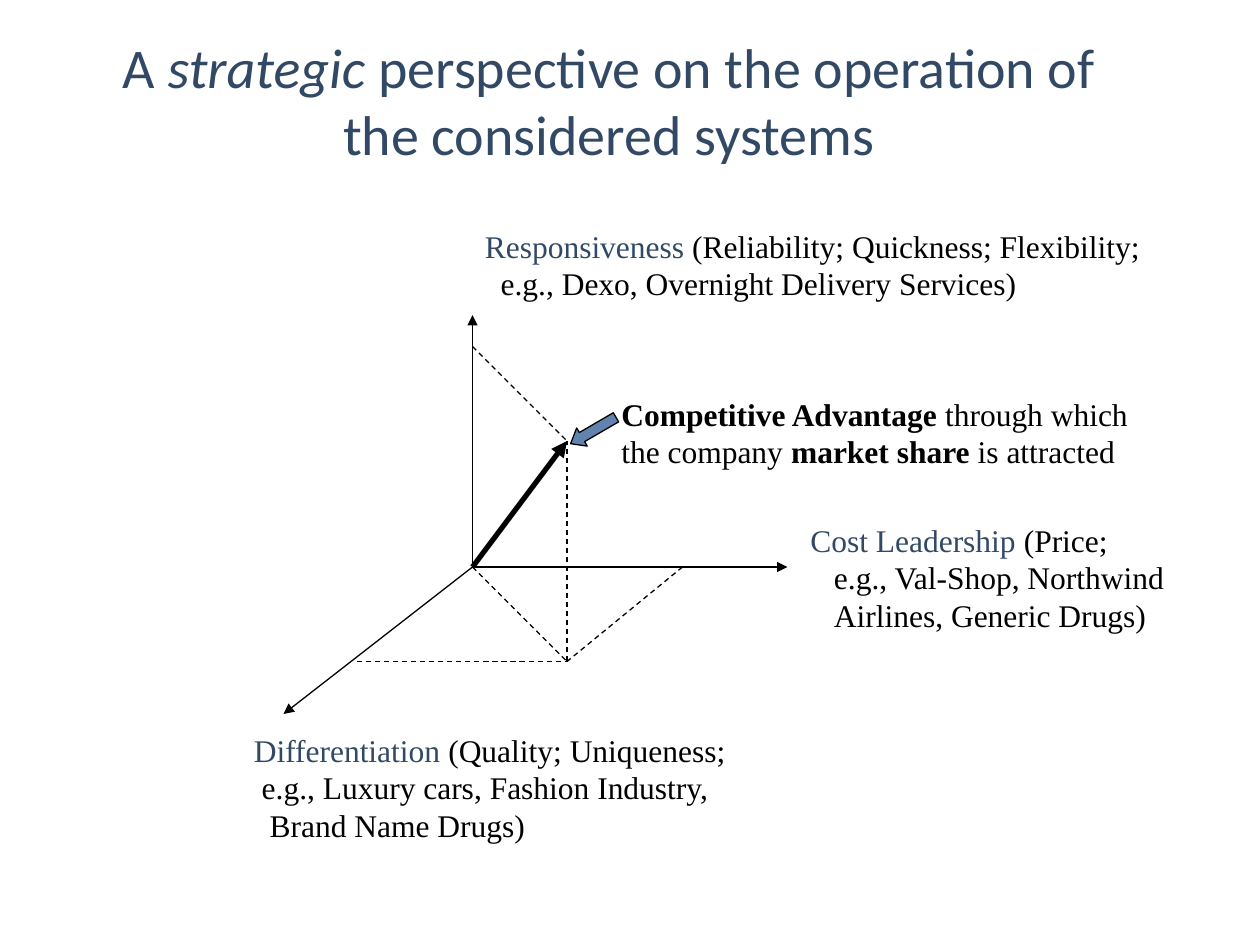
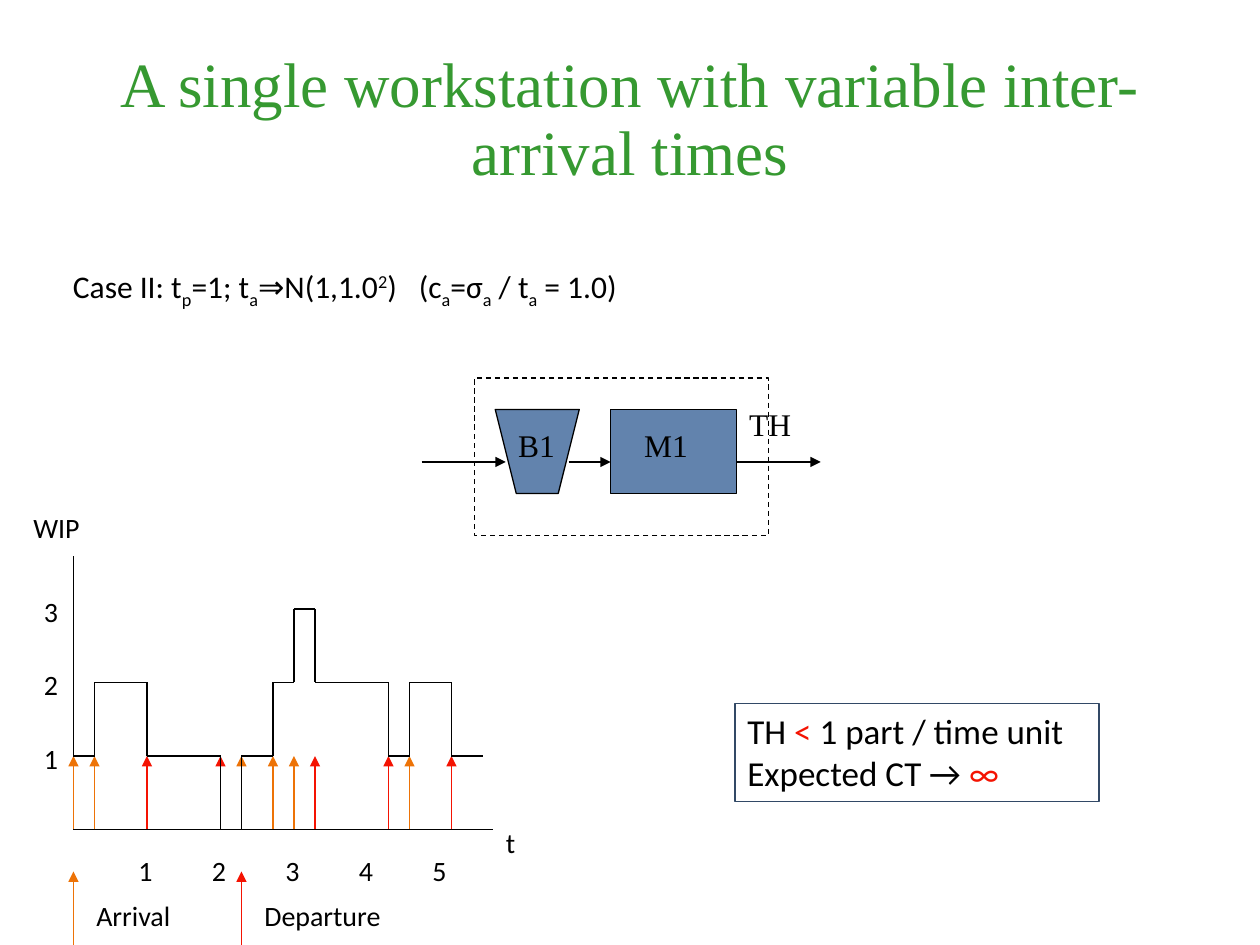
"""Build two slides on competitive strategy and on a workstation with variable arrivals."""
from itertools import pairwise

from lxml.etree import SubElement
from pptx import Presentation
from pptx.dml.color import RGBColor
from pptx.enum.dml import MSO_LINE
from pptx.enum.shapes import MSO_CONNECTOR, MSO_SHAPE
from pptx.enum.text import MSO_ANCHOR, MSO_AUTO_SIZE, PP_ALIGN
from pptx.oxml.ns import qn
from pptx.util import Pt

COLORS = {"black": "000000", "navy": "324966", "steel": "6283AD",
          "green": "369931", "orange": "ED7307", "red": "F41302"}
SERIF = {"name": "Times New Roman", "size": Pt(18)}
SANS = {"name": "Calibri", "size": Pt(18)}
CHART_FONT = {"name": "Calibri", "size": Pt(16)}
RESULT_FONT = {"name": "Calibri", "size": Pt(20)}
NAVY, RED = {"color": "navy"}, {"color": "red"}
BOLD, ITALIC = {"bold": True}, {"italic": True}
SUB, SUPER = {"baseline": "-25000"}, {"baseline": "30000"}

STRATEGY_TITLE = ["A ", ("strategic", ITALIC), " perspective on the operation of the considered systems"]
ORIGIN, ADVANTAGE, FLOOR = (270, 324), (324, 252), (324, 378)
AXIS_ENDS = [(270, 180), (450, 324), (162, 408)]
PROJECTIONS = [((390, 324), FLOOR), ((204, 378), FLOOR), (FLOOR, ADVANTAGE),
               (ORIGIN, FLOOR), ((270, 198), ADVANTAGE)]
STRATEGY_LABELS = [
    ((138, 414, 285, 72), [
        (0, [("Differentiation", NAVY), " (Quality; Uniqueness;"]),
        (4.5, ["e.g., Luxury cars, Fashion Industry,"]),
        (9, ["Brand Name Drugs)"])]),
    ((456, 294, 225, 72), [
        (0, [("Cost Leadership", NAVY), " (Price;"]),
        (13.5, ["e.g., Val-Shop, Northwind"]),
        (13.5, ["Airlines, Generic Drugs)"])]),
    ((270, 126, 396, 50), [
        (0, [("Responsiveness", NAVY), " (Reliability; Quickness; Flexibility;"]),
        (9, ["e.g., Dexo, Overnight Delivery Services)"])]),
    ((348, 222, 308, 50), [
        (0, [("Competitive Advantage ", BOLD), "through which"]),
        (0, ["the company", (" market share ", BOLD), "is attracted"])]),
]

WORKSTATION_TITLE = ["A single workstation with variable inter-arrival times"]
CASE = ["Case II: t", ("p", SUB), "=1; t", ("a", SUB), "⇒N(1,1.0", ("2", SUPER), ")\t(c",
        ("a", SUB), "=σ", ("a", SUB), " / t", ("a", SUB), " = 1.0)"]
CASE_TAB = 197.7
RESULT = [(0, ["TH ", ("<", RED), " 1 part / time unit"]), (0, ["Expected CT →", (" ∞", RED)])]
BUFFER = [(283, 234), (295, 282), (319, 282), (331, 234)]
MACHINE, SYSTEM = (349, 234, 72, 48), (271, 216, 168, 90)
FLOW_Y, FLOWS = 264, [(241, 289), (325, 349), (421, 469)]
FLOW_LABELS = [("TH", 421, 228), ("B1", 289, 240), ("M1", 361, 240)]

ARRIVALS = [0, 2, 16, 19, 21, 32]
DEPARTURES = [7, 14, 23, 30, 36]
TICKS_PER_UNIT, LAST_TICK = 7, 39
CHART_X, CHART_Y, UNIT = 42, 474, 42
TIMES, LEVELS = range(1, 6), range(1, 4)
AXIS_NAMES = [("t", 282, 468), ("WIP", 12, 288)]
LEGEND = [("Arrival", 42, "orange"), ("Departure", 138, "red")]


def rgb(color):
    return RGBColor.from_string(COLORS[color])


def apply(target, values):
    for attribute, value in values.items():
        setattr(target, attribute, value)


def box(x, y, width, height):
    return [Pt(length) for length in (x, y, width, height)]


def add_runs(paragraph, runs, font, base_color="black"):
    for entry in runs:
        words, style = (entry, {}) if isinstance(entry, str) else entry
        run = paragraph.add_run()
        run.text = words
        extras = {key: style[key] for key in ("bold", "italic") if key in style}
        apply(run.font, font | extras)
        run.font.color.rgb = rgb(style.get("color", base_color))
        if "baseline" in style:
            run._r.get_or_add_rPr().set("baseline", style["baseline"])


def add_label(slide, place, lines, font):
    label = slide.shapes.add_textbox(*box(*place))
    frame = label.text_frame
    apply(frame, {"word_wrap": True, "margin_right": 0})
    for number, (indent, runs) in enumerate(lines):
        paragraph = frame.add_paragraph() if number else frame.paragraphs[0]
        if indent:
            paragraph._p.get_or_add_pPr().set("marL", str(Pt(indent)))
        add_runs(paragraph, runs, font)
    return label


def add_line(slide, start, end, color="black", width=0.75, arrow=False, dashed=False):
    line = slide.shapes.add_connector(MSO_CONNECTOR.STRAIGHT, *box(*start, *end))
    line.line.color.rgb = rgb(color)
    line.line.width = Pt(width)
    if dashed:
        line.line.dash_style = MSO_LINE.DASH
    properties = line._element.spPr
    if arrow:
        SubElement(properties.find(qn("a:ln")), qn("a:tailEnd"), type="triangle")
    SubElement(properties, qn("a:effectLst"))


def paint(shape, fill=None, line="black"):
    shape.shadow.inherit = False
    if fill:
        shape.fill.solid()
        shape.fill.fore_color.rgb = rgb(fill)
    else:
        shape.fill.background()
    shape.line.color.rgb = rgb(line)
    shape.line.width = Pt(0.75)


def add_titled_slide(deck, runs, place, font, color, spacing=1.0):
    slide = deck.slides.add_slide(deck.slide_layouts[5])
    title = slide.shapes.title
    apply(title, dict(zip(("left", "top", "width", "height"), box(*place))))
    apply(title.text_frame, {"vertical_anchor": MSO_ANCHOR.MIDDLE, "word_wrap": True,
                             "auto_size": MSO_AUTO_SIZE.NONE})
    paragraph = title.text_frame.paragraphs[0]
    apply(paragraph, {"alignment": PP_ALIGN.CENTER, "line_spacing": spacing})
    add_runs(paragraph, runs, font, color)
    return slide


def build_strategy(deck):
    slide = add_titled_slide(deck, STRATEGY_TITLE, (42, 12, 612, 90),
                             SANS | {"size": Pt(32)}, "navy")
    for end in AXIS_ENDS:
        add_line(slide, ORIGIN, end, arrow=True)
    for start, end in PROJECTIONS:
        add_line(slide, start, end, dashed=True)
    add_line(slide, ORIGIN, ADVANTAGE, width=3, arrow=True)
    for place, lines in STRATEGY_LABELS:
        add_label(slide, place, lines, SERIF)
    pointer = slide.shapes.add_shape(MSO_SHAPE.RIGHT_ARROW, *box(324, 240, 30, 12))
    pointer.rotation = 149.8
    pointer.adjustments[0], pointer.adjustments[1] = 0.5, 0.625
    paint(pointer, "steel")


def build_flow(slide):
    paint(slide.shapes.add_shape(MSO_SHAPE.RECTANGLE, *box(*MACHINE)), "steel")
    outline = slide.shapes.build_freeform(*BUFFER[0], scale=Pt(1))
    outline.add_line_segments(BUFFER[1:], close=True)
    paint(outline.convert_to_shape(), "steel")
    system = slide.shapes.add_shape(MSO_SHAPE.RECTANGLE, *box(*SYSTEM))
    paint(system)
    system.line.dash_style = MSO_LINE.DASH
    for start, end in FLOWS:
        add_line(slide, (start, FLOW_Y), (end, FLOW_Y), arrow=True)
    for name, x, y in FLOW_LABELS:
        add_label(slide, (x, y, 47, 36), [(0, [name])], SERIF)


def chart_point(tick, level):
    return CHART_X + tick * UNIT / TICKS_PER_UNIT, CHART_Y - level * UNIT


def wip_corners():
    changes = sorted([(tick, 1) for tick in ARRIVALS] + [(tick, -1) for tick in DEPARTURES])
    level, corners = 0, []
    for tick, change in changes:
        if corners:
            corners.append((tick, level))
        level += change
        corners.append((tick, level))
    return corners + [(LAST_TICK, level)]


def build_wip_chart(slide):
    for end in ((282, CHART_Y), (CHART_X, 318)):
        add_line(slide, (CHART_X, CHART_Y), end)
    for ticks, color in ((ARRIVALS, "orange"), (DEPARTURES, "red")):
        for tick in ticks:
            add_line(slide, chart_point(tick, 0), chart_point(tick, 1), color, arrow=True)
    for start, end in pairwise(wip_corners()):
        add_line(slide, chart_point(*start), chart_point(*end))
    labels = [(str(time), 30 + time * UNIT, 484) for time in TIMES]
    labels += [(str(level), 18, 462 - level * UNIT) for level in LEVELS]
    labels += AXIS_NAMES
    for name, x, color in LEGEND:
        add_line(slide, (x, 540), (x, 498), color, arrow=True)
        labels.append((name, x + 6, 510))
    for name, x, y in labels:
        add_label(slide, (x, y, 16 + 10 * len(name), 27), [(0, [name])], CHART_FONT)


def build_workstation(deck):
    slide = add_titled_slide(deck, WORKSTATION_TITLE, (54, 24, 612, 90),
                             SERIF | {"size": Pt(36)}, "green", 0.9)
    build_flow(slide)
    case = add_label(slide, (34.6, 149, 485, 36), [(0, CASE)], SANS)
    tabs = SubElement(case.text_frame.paragraphs[0]._p.get_or_add_pPr(), qn("a:tabLst"))
    SubElement(tabs, qn("a:tab"), pos=str(Pt(CASE_TAB)), algn="l")
    paint(add_label(slide, (420, 402, 208, 56), RESULT, RESULT_FONT), line="navy")
    build_wip_chart(slide)


def main():
    deck = Presentation()
    apply(deck, {"slide_width": Pt(720), "slide_height": Pt(540)})
    build_strategy(deck)
    build_workstation(deck)
    deck.save("out.pptx")


if __name__ == "__main__":
    main()
